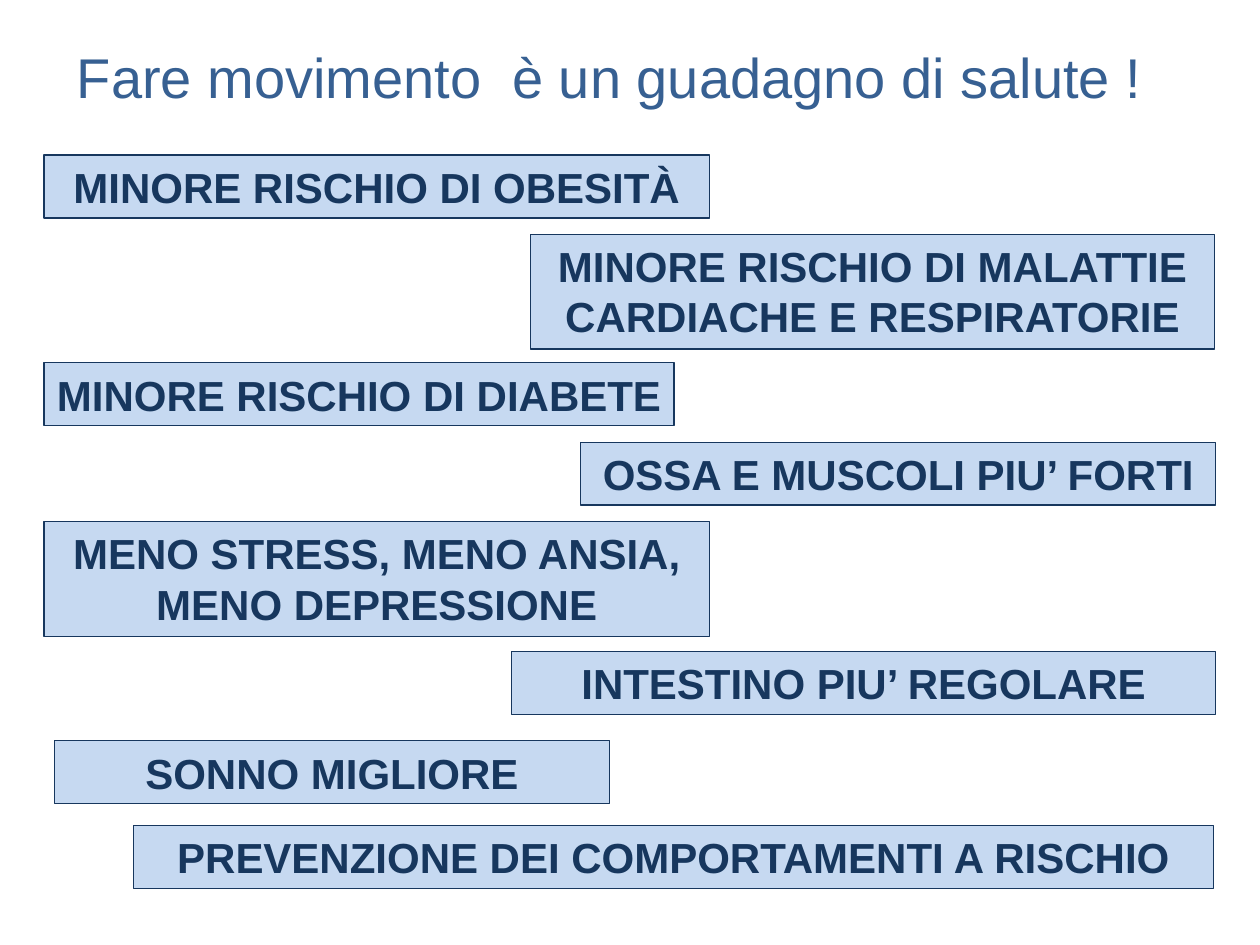
from pptx import Presentation
from pptx.dml.color import RGBColor
from pptx.enum.shapes import MSO_SHAPE as Shape
from pptx.enum.text import MSO_ANCHOR as Anchor, MSO_AUTO_SIZE as AutoSize, PP_ALIGN as Align
from pptx.util import Inches, Pt

TITLE_BLUE = RGBColor(0x37, 0x60, 0x92)
NAVY = RGBColor(0x17, 0x37, 0x5E)
PALE_BLUE = RGBColor(0xC6, 0xD9, 0xF1)

ONE_LINE, TWO_LINES = 0.5, 0.91
BENEFITS = [
    ("MINORE RISCHIO DI OBESITÀ", (0.35, 1.23, 5.28, ONE_LINE)),
    ("MINORE RISCHIO DI MALATTIE CARDIACHE E RESPIRATORIE", (4.21, 1.86, 5.43, TWO_LINES)),
    ("MINORE RISCHIO DI DIABETE", (0.35, 2.88, 5, ONE_LINE)),
    ("OSSA E MUSCOLI PIU’ FORTI", (4.61, 3.51, 5.04, ONE_LINE)),
    ("MENO STRESS, MENO ANSIA, MENO DEPRESSIONE", (0.35, 4.14, 5.28, TWO_LINES)),
    ("INTESTINO PIU’ REGOLARE", (4.06, 5.17, 5.59, ONE_LINE)),
    ("SONNO MIGLIORE", (0.43, 5.88, 4.41, ONE_LINE)),
    ("PREVENZIONE DEI COMPORTAMENTI A RISCHIO", (1.06, 6.55, 8.57, ONE_LINE)),
]


def write_text(shape, text, size, color, bold=False, wrap=True):
    """Write one centred paragraph in a shape that grows with its text."""
    frame = shape.text_frame
    frame.word_wrap = wrap
    frame.auto_size = AutoSize.SHAPE_TO_FIT_TEXT
    frame.vertical_anchor = Anchor.TOP
    para = frame.paragraphs[0]
    para.text = text
    para.alignment = Align.CENTER
    font = para.font
    font.name, font.size, font.bold = "Arial", Pt(size), bold
    font.color.rgb = color


def add_title(page, text, box):
    """Place the slide heading in the given box."""
    title = page.shapes.add_textbox(*map(Inches, box))
    write_text(title, text, 32, TITLE_BLUE, wrap=False)


def add_benefit(page, text, box):
    """Place one bordered benefit panel in the given box."""
    panel = page.shapes.add_shape(Shape.RECTANGLE, *map(Inches, box))
    panel.shadow.inherit = False
    panel.fill.solid()
    panel.fill.fore_color.rgb = PALE_BLUE
    panel.line.color.rgb = NAVY
    panel.line.width = Pt(0.75)
    write_text(panel, text, 24, NAVY, bold=True)


def main():
    """Build the slide and save the deck."""
    deck = Presentation()
    deck.slide_width, deck.slide_height = Inches(10), Inches(7.5)
    page = deck.slides.add_slide(deck.slide_layouts[6])
    add_title(page, "Fare movimento  è un guadagno di salute !", (0.48, 0.29, 8.72, 0.64))
    for text, box in BENEFITS:
        add_benefit(page, text, box)
    deck.save("out.pptx")


if __name__ == "__main__":
    main()
